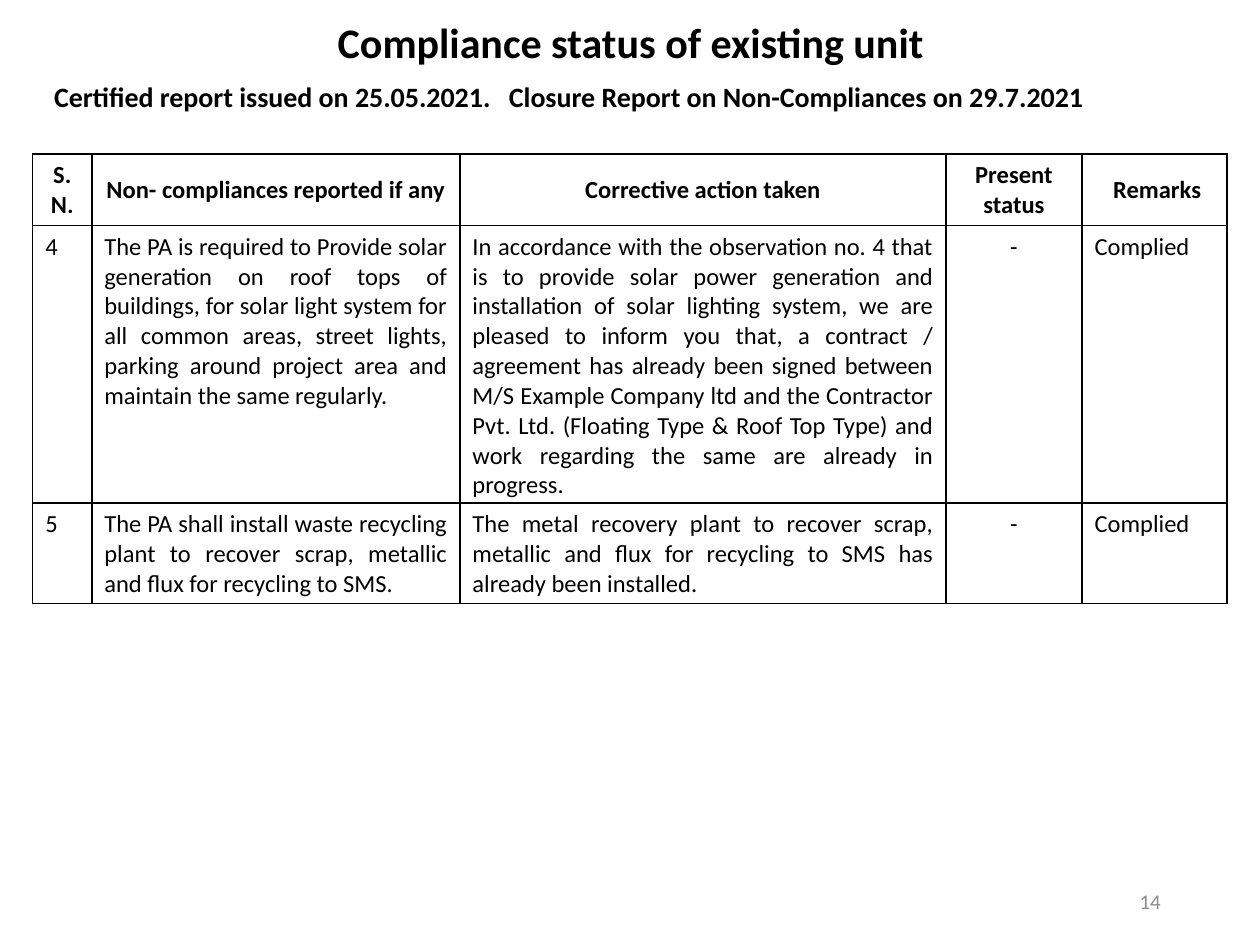
"""Build the compliance status slide with its table of corrective actions."""
from lxml.etree import SubElement
from pptx import Presentation
from pptx.dml.color import RGBColor
from pptx.enum.text import MSO_ANCHOR, PP_ALIGN
from pptx.oxml.ns import qn
from pptx.util import Cm, Pt

L, C, R, J = PP_ALIGN.LEFT, PP_ALIGN.CENTER, PP_ALIGN.RIGHT, PP_ALIGN.JUSTIFY
TOP, MIDDLE = MSO_ANCHOR.TOP, MSO_ANCHOR.MIDDLE

TITLE = "Compliance status of existing unit"
SUBTITLE = "Certified report issued on 25.05.2021.\tClosure Report on Non-Compliances on 29.7.2021"
PAGE = "14"
HEADER = ["S. N.", "Non- compliances reported if any", "Corrective action taken",
          "Present status", " Remarks"]
ROWS = [
    ["4",
     "The PA is required to Provide solar generation on roof tops of buildings, for solar "
     "light system for all common areas, street lights, parking around project area and "
     "maintain the same regularly.",
     "In accordance with the observation no. 4 that is to provide solar power generation and "
     "installation of solar lighting system, we are pleased to inform you that, a contract / "
     "agreement has already been signed between M/S Example Company ltd and the Contractor "
     "Pvt. Ltd. (Floating Type & Roof Top Type) and work regarding the same are already in "
     "progress.",
     "-", "Complied"],
    ["5",
     "The PA shall install waste recycling plant to recover scrap, metallic and flux for "
     "recycling to SMS.",
     "The metal recovery plant to recover scrap, metallic and flux for recycling to SMS has "
     "already been installed.",
     "-", "Complied"],
]
COL_WIDTHS = [1.19, 7.42, 9.8, 2.74, 2.92]
ROW_HEIGHTS = [1.45, 5.59, 2.03]
BODY_ALIGN = [J, J, J, C, L]
TAB_STOP = 9.17

THEME = {
    "font": "Calibri", "ink": "000000", "border_pt": 1,
    "title": {"size": Pt(24), "bold": True, "color": "000000"},
    "subtitle": {"size": Pt(16), "bold": True, "color": "000000"},
    "header": {"size": Pt(14), "bold": True, "color": "000000"},
    "body": {"size": Pt(14), "bold": False, "color": "000000"},
    "page": {"size": Pt(12), "bold": False, "color": "8C8C8C"},
}
BOXES = [
    (TITLE, "title", (6.05, 0.33, 13.33, 1.17), {"alignment": C, "line_spacing": 0.9}, TOP),
    (SUBTITLE, "subtitle", (0.84, 1.47, 23.93, 0.94), {"alignment": L}, TOP),
    (PAGE, "page", (17.93, 17.65, 5.72, 1.02), {"alignment": R}, MIDDLE),
]


def set_attrs(obj, values):
    for name, value in values.items():
        setattr(obj, name, value)


def write(tf, text, style, para):
    p = tf.paragraphs[0]
    set_attrs(p, para)
    r = p.add_run()
    r.text = text
    fmt = dict(THEME[style], name=THEME["font"])
    r.font.color.rgb = RGBColor.from_string(fmt.pop("color"))
    set_attrs(r.font, fmt)
    if "\t" in text:
        tabs = SubElement(p._p.get_or_add_pPr(), qn("a:tabLst"))
        SubElement(tabs, qn("a:tab"), pos=str(Cm(TAB_STOP)), algn="l")


def add_borders(cell):
    tc_pr = cell._tc.get_or_add_tcPr()
    for side in ("lnL", "lnR", "lnT", "lnB"):
        ln = SubElement(tc_pr, qn(f"a:{side}"), w=str(Pt(THEME["border_pt"])))
        fill = SubElement(ln, qn("a:solidFill"))
        SubElement(fill, qn("a:srgbClr"), val=THEME["ink"])


def add_table(s):
    size = Cm(sum(COL_WIDTHS)), Cm(sum(ROW_HEIGHTS))
    table = s.shapes.add_table(len(ROWS) + 1, len(HEADER), Cm(0.66), Cm(3.1), *size).table
    set_attrs(table, {"first_row": False, "horz_banding": False})
    for col, width in zip(table.columns, COL_WIDTHS):
        col.width = Cm(width)
    for row, height in zip(table.rows, ROW_HEIGHTS):
        row.height = Cm(height)
    for i, texts in enumerate([HEADER] + ROWS):
        for j, text in enumerate(texts):
            cell = table.cell(i, j)
            head = i == 0
            write(cell.text_frame, text, "header" if head else "body",
                  {"alignment": C if head else BODY_ALIGN[j]})
            set_attrs(cell, {"vertical_anchor": MIDDLE if head else TOP,
                             "margin_bottom": Cm(0.13 if head else 0)})
            add_borders(cell)
            cell.fill.background()


def main():
    prs = Presentation()
    set_attrs(prs, {"slide_width": Cm(25.4), "slide_height": Cm(19.05)})
    s = prs.slides.add_slide(prs.slide_layouts[6])
    for text, style, place, para, anchor in BOXES:
        tf = s.shapes.add_textbox(*map(Cm, place)).text_frame
        set_attrs(tf, {"word_wrap": True, "vertical_anchor": anchor})
        write(tf, text, style, para)
    add_table(s)
    prs.save("out.pptx")


if __name__ == "__main__":
    main()
